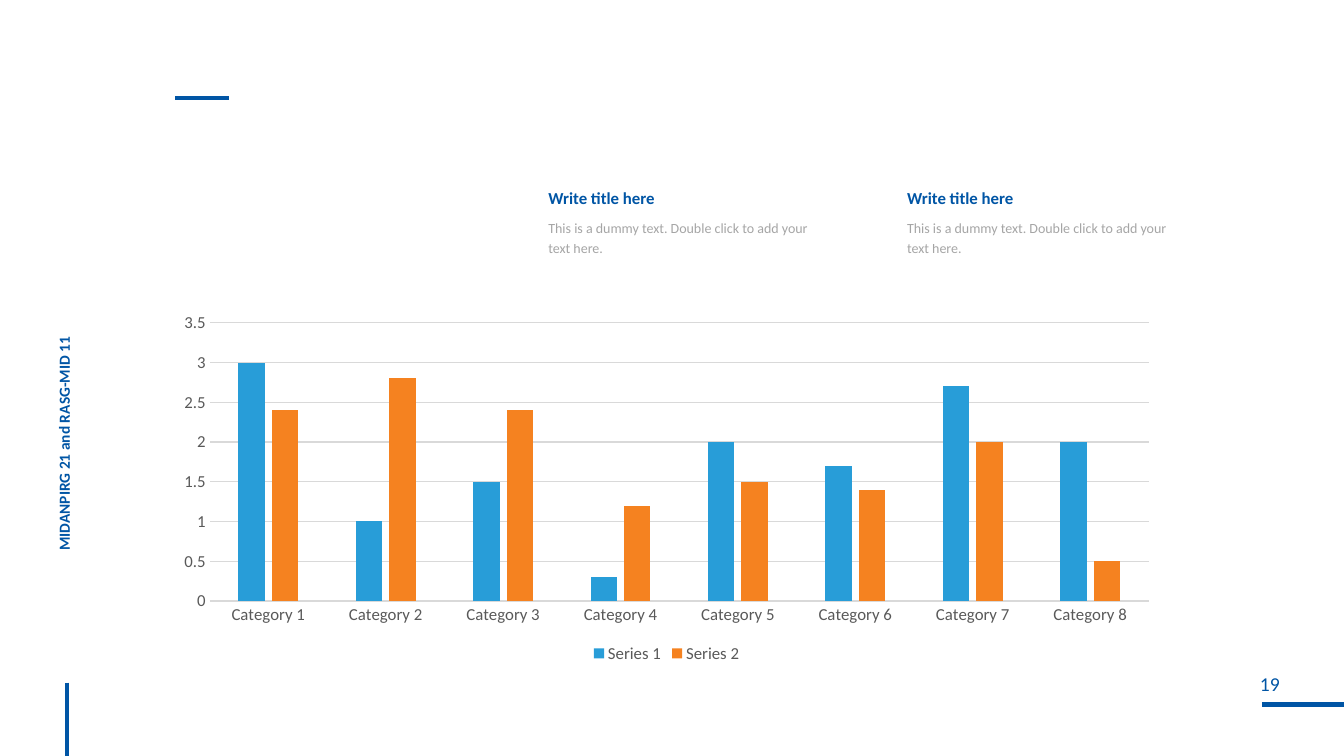
from lxml import etree
from pptx import Presentation
from pptx.chart.data import CategoryChartData
from pptx.dml.color import RGBColor
from pptx.enum.chart import XL_CHART_TYPE, XL_LEGEND_POSITION, XL_TICK_MARK
from pptx.enum.shapes import MSO_CONNECTOR
from pptx.enum.text import MSO_AUTO_SIZE, PP_ALIGN
from pptx.oxml.ns import qn
from pptx.util import Cm, Pt

FONT = "Calibri"
BLUE, GREY, DARK, GRID = "0055A5", "808080", "595959", "D9D9D9"
WIDTH, HEIGHT = 33.87, 19.05

RULES = [
    (31.8, 17.75, WIDTH, 17.75),
    (1.68, 17.2, 1.68, HEIGHT),
    (4.42, 2.46, 5.77, 2.46),
]
CARD_LEFTS = [13.82, 22.86]
CATEGORIES = [f"Category {number}" for number in range(1, 9)]
SERIES = [
    ("Series 1", [3, 1, 1.5, 0.3, 2, 1.7, 2.7, 2], "289DD8"),
    ("Series 2", [2.4, 2.8, 2.4, 1.2, 1.5, 1.4, 2, 0.5], "F58220"),
]


def colour(value):
    return RGBColor.from_string(value)


def style_font(font, size, value, bold=False):
    font.name = FONT
    font.size = Pt(size)
    font.bold = bold
    font.color.rgb = colour(value)


def add_rule(page, x1, y1, x2, y2):
    rule = page.shapes.add_connector(
        MSO_CONNECTOR.STRAIGHT, Cm(x1), Cm(y1), Cm(x2), Cm(y2))
    rule.line.color.rgb = colour(BLUE)
    rule.line.width = Pt(3)
    etree.SubElement(rule._element.spPr, qn("a:effectLst"))


def add_box(page, left, top, width, height, side=0.25, edge=0.13, wrap=True):
    box = page.shapes.add_textbox(Cm(left), Cm(top), Cm(width), Cm(height))
    frame = box.text_frame
    frame.word_wrap = wrap
    frame.margin_left = frame.margin_right = Cm(side)
    frame.margin_top = frame.margin_bottom = Cm(edge)
    return box


def add_span(para, text, size, value, bold=False, opacity=None):
    span = para.add_run()
    span.text = text
    style_font(span.font, size, value, bold)
    if opacity:
        fill = span._r.rPr.find(qn("a:solidFill"))
        etree.SubElement(fill[0], qn("a:alpha"), val=str(opacity * 1000))


def add_page_number(page):
    box = add_box(page, 30.48, 16.92, 3.05, 0.84, side=0, edge=0, wrap=False)
    para = box.text_frame.paragraphs[0]
    para.alignment = PP_ALIGN.CENTER
    add_span(para, "19", 14, BLUE)


def add_side_label(page):
    box = add_box(page, -4.83, 7.19, 13.06, 0.81)
    box.rotation = 270
    para = box.text_frame.paragraphs[0]
    para.line_spacing = 0.9
    add_span(para, "MIDANPIRG 21 and RASG-MID 11", 11, BLUE, bold=True)


def add_card(page, left):
    frame = add_box(page, left, 4.5, 6.6, 2.11, side=0).text_frame
    frame.auto_size = MSO_AUTO_SIZE.SHAPE_TO_FIT_TEXT
    heading = frame.paragraphs[0]
    add_span(heading, "Write title here", 12, BLUE, bold=True)
    body = frame.add_paragraph()
    body.space_before = Pt(6)
    add_span(body, "This is a dummy text. Double click to add your text here.",
             10, GREY, opacity=70)
    for para in frame.paragraphs:
        para.line_spacing = 1.2


def style_axis(axis):
    axis.major_tick_mark = axis.minor_tick_mark = XL_TICK_MARK.NONE
    style_font(axis.tick_labels.font, 12, DARK)


def style_line(line):
    line.color.rgb = colour(GRID)
    line.width = Pt(0.75)


def add_column_chart(page):
    data = CategoryChartData()
    data.categories = CATEGORIES
    for name, values, _ in SERIES:
        data.add_series(name, values)
    chart = page.shapes.add_chart(
        XL_CHART_TYPE.COLUMN_CLUSTERED,
        Cm(4.14), Cm(7.7), Cm(25.32), Cm(9.12), data).chart
    style_font(chart.font, 10, "000000")
    chart.has_title = False

    # Columns
    plot = chart.plots[0]
    plot.vary_by_categories = False
    plot.gap_width = 219
    plot.overlap = -27
    for series, (_, _, value) in zip(plot.series, SERIES):
        series.format.fill.solid()
        series.format.fill.fore_color.rgb = colour(value)

    # Axes
    style_axis(chart.category_axis)
    style_line(chart.category_axis.format.line)
    scale = chart.value_axis
    style_axis(scale)
    scale.minimum_scale, scale.maximum_scale, scale.major_unit = 0, 3.5, 0.5
    scale.format.line.fill.background()
    scale.has_major_gridlines = True
    style_line(scale.major_gridlines.format.line)

    # Legend
    chart.has_legend = True
    chart.legend.position = XL_LEGEND_POSITION.BOTTOM
    chart.legend.include_in_layout = False
    style_font(chart.legend.font, 12, DARK)


def main():
    deck = Presentation()
    deck.slide_width, deck.slide_height = Cm(WIDTH), Cm(HEIGHT)
    page = deck.slides.add_slide(deck.slide_layouts[6])

    # Frame of the page
    for ends in RULES:
        add_rule(page, *ends)
    add_page_number(page)
    add_side_label(page)

    # Content
    for left in CARD_LEFTS:
        add_card(page, left)
    add_column_chart(page)

    deck.save("out.pptx")


if __name__ == "__main__":
    main()
